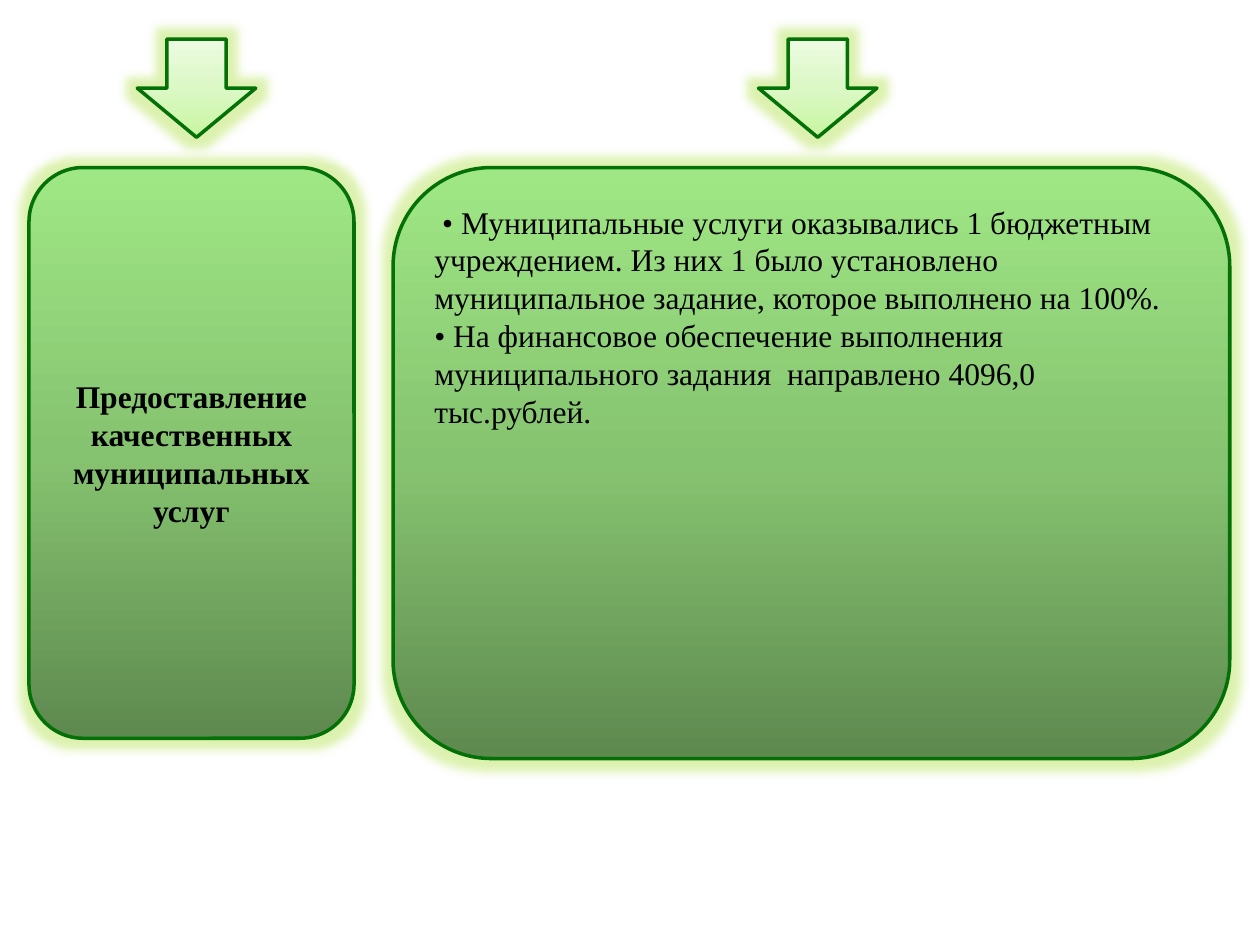
from copy import deepcopy
from dataclasses import dataclass

from lxml import etree
from pptx import Presentation
from pptx.dml.color import RGBColor
from pptx.enum.shapes import MSO_SHAPE
from pptx.enum.text import MSO_ANCHOR, PP_ALIGN
from pptx.oxml.ns import qn
from pptx.util import Inches, Pt

ARROW = MSO_SHAPE.DOWN_ARROW
ROUND = MSO_SHAPE.ROUNDED_RECTANGLE
TOP, MIDDLE = MSO_ANCHOR.TOP, MSO_ANCHOR.MIDDLE
LEFT, CENTER = PP_ALIGN.LEFT, PP_ALIGN.CENTER

FONT = "Times New Roman"
BLACK, EDGE, GLOW = "000000", "037106", "AADE39"
PALE = ("C8F6A1", "DBF8C5", "EDFBE2")
DEEP = ("5E894F", "86C370", "9FE785")


@dataclass
class Panel:
    left: float
    width: float
    height: float
    arrow: float
    lines: tuple[str, ...]
    bold: bool = False
    align: PP_ALIGN = LEFT
    anchor: MSO_ANCHOR = TOP


PANELS = (
    Panel(0.23, 2.58, 4.53, 1.09,
          ("Предоставление качественных муниципальных", "услуг"),
          bold=True, align=CENTER, anchor=MIDDLE),
    Panel(3.12, 6.64, 4.69, 6.02,
          (" • Муниципальные услуги оказывались 1 бюджетным учреждением. "
           "Из них 1 было установлено муниципальное задание, "
           "которое выполнено на 100%.",
           "• На финансовое обеспечение выполнения муниципального задания  "
           "направлено 4096,0  тыс.рублей.")),
)


def paint(color, value: str) -> None:
    color.rgb = RGBColor.from_string(value)


def shade(fill, tones: tuple[str, ...]) -> None:
    fill.gradient()
    fill.gradient_angle = 90
    first = fill.gradient_stops[0]._gs
    first.addnext(deepcopy(first))
    last = len(tones) - 1
    for i, (stop, tone) in enumerate(zip(fill.gradient_stops, tones)):
        stop.position = i / last
        paint(stop.color, tone)


def add_glow(shape) -> None:
    shape.shadow.inherit = False
    effects = shape._element.spPr.find(qn("a:effectLst"))
    glow = etree.SubElement(effects, qn("a:glow"), rad=str(Inches(0.15)))
    tint = etree.SubElement(glow, qn("a:srgbClr"), val=GLOW)
    etree.SubElement(tint, qn("a:alpha"), val="40000")


def add_form(slide, kind: MSO_SHAPE, box: tuple[float, ...],
             tones: tuple[str, ...]):
    shape = slide.shapes.add_shape(kind, *map(Inches, box))
    shade(shape.fill, tones)
    paint(shape.line.color, EDGE)
    shape.line.width = Pt(2)
    add_glow(shape)
    return shape


def write(shape, lines: tuple[str, ...], *, size: float = 18,
          bold: bool = False, align: PP_ALIGN = LEFT,
          anchor: MSO_ANCHOR = TOP) -> None:
    frame = shape.text_frame
    frame.word_wrap = True
    frame.vertical_anchor = anchor
    frame.text = "\n".join(lines)
    for para in frame.paragraphs:
        para.alignment = align
        font = para.font
        font.name, font.size, font.bold = FONT, Pt(size), bold
        paint(font.color, BLACK)


def draw(slide, panel: Panel) -> None:
    add_form(slide, ARROW, (panel.arrow, 0.31, 0.94, 0.78), PALE)
    shape = add_form(slide, ROUND,
                     (panel.left, 1.33, panel.width, panel.height), DEEP)
    write(shape, panel.lines, bold=panel.bold, align=panel.align,
          anchor=panel.anchor)


def main() -> None:
    deck = Presentation()
    deck.slide_width, deck.slide_height = Inches(10), Inches(7.5)
    slide = deck.slides.add_slide(deck.slide_layouts[6])
    for panel in PANELS:
        draw(slide, panel)
    deck.save("out.pptx")


if __name__ == "__main__":
    main()
